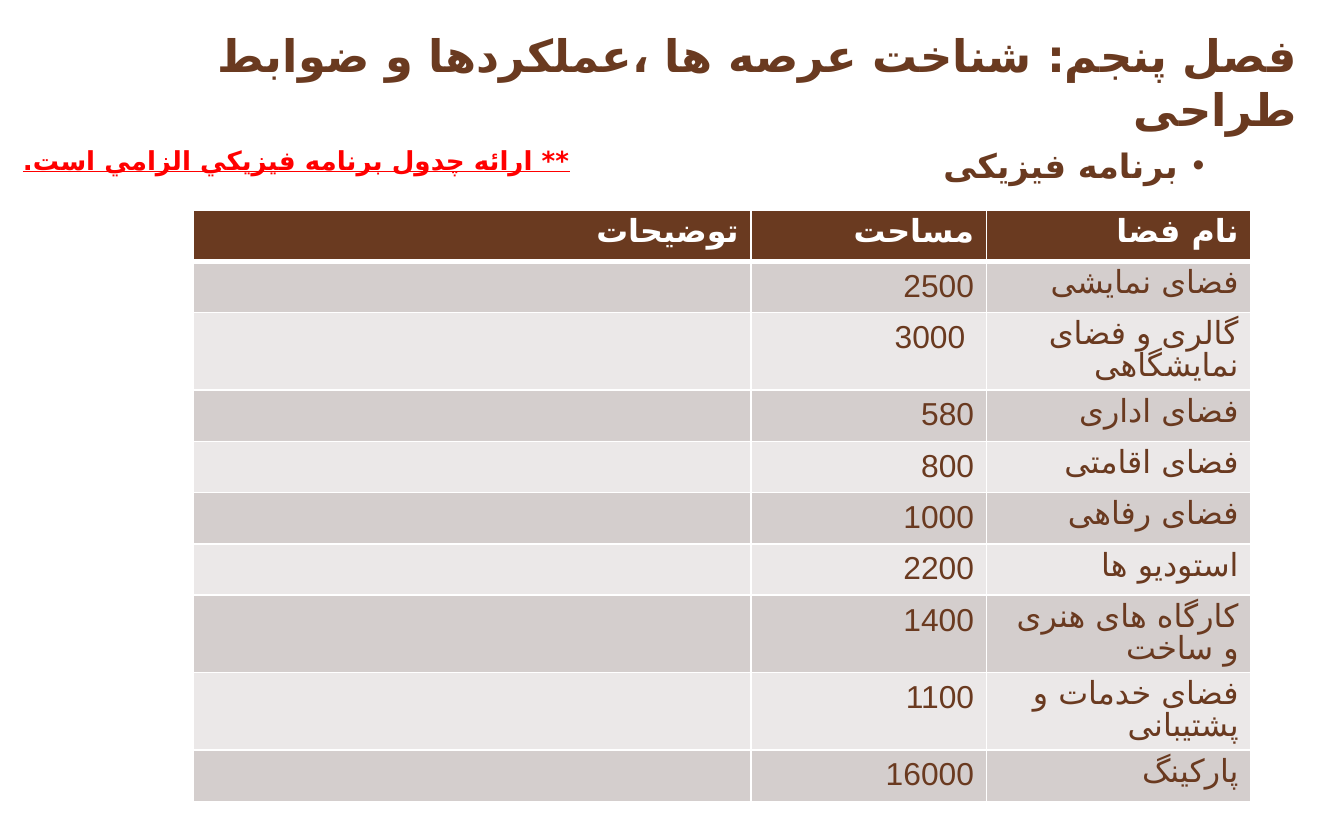
"""Build the physical programme slide with its table of spaces and areas."""
import dataclasses
import typing

import lxml.etree
import pptx
import pptx.dml.color
import pptx.enum.text
import pptx.oxml.ns
import pptx.util

Cm = pptx.util.Cm
Pt = pptx.util.Pt
qn = pptx.oxml.ns.qn

FONT = "Arial"
PERSIAN_FONT = "DejaVu Sans"
COLORS = {
    "brown": "6A3A20",
    "red": "FF0000",
    "white": "FFFFFF",
    "odd": "D4CECD",
    "even": "EBE8E8",
}


@dataclasses.dataclass(frozen=True)
class TextStyle:
    size: float
    color: str = "brown"
    bold: bool = True
    underline: bool = False
    right_to_left: bool = True
    line_spacing: typing.Optional[float] = None
    bullet: bool = False


@dataclasses.dataclass(frozen=True)
class Label:
    text: str
    left: float
    top: float
    width: float
    height: float
    style: TextStyle
    margin_x: float = 0.25
    margin_y: float = 0.13
    anchor: typing.Any = pptx.enum.text.MSO_ANCHOR.TOP


@dataclasses.dataclass(frozen=True)
class Space:
    name: str
    area: str
    remarks: str = ""


LABELS = [
    Label("برنامه فیزیکی", 2.69, 2.69, 20.32, 1.1,
          TextStyle(18, line_spacing=0.9, bullet=True)),
    Label("فصل پنجم: شناخت عرصه ها ،عملکردها و ضوابط طراحی", 2.87, 1.42, 21.89, 1.27,
          TextStyle(24), anchor=pptx.enum.text.MSO_ANCHOR.BOTTOM),
    Label("** ارائه چدول برنامه فيزيکي الزامي است.", 0.2, 2.69, 10.75, 0.79,
          TextStyle(14, "red", underline=True, line_spacing=0.9),
          margin_x=0.18, margin_y=0.1),
]
HEADER = Space("نام فضا", "مساحت", "توضیحات")
SPACES = [
    Space("فضای نمایشی", "2500"),
    Space("گالری و فضای نمایشگاهی", "3000 "),
    Space("فضای اداری", "580"),
    Space("فضای اقامتی", "800"),
    Space("فضای رفاهی", "1000"),
    Space("استودیو ها", "2200"),
    Space("کارگاه های هنری و ساخت", "1400"),
    Space("فضای خدمات و پشتیبانی", "1100"),
    Space("پارکینگ", "16000"),
]
COLUMN_WIDTHS = [10.53, 4.45, 5.0]
ROW_HEIGHT = 0.97
HEADER_STYLE = TextStyle(17, "white", line_spacing=0.86)
NAME_STYLE = TextStyle(17, bold=False, right_to_left=False, line_spacing=0.86)
AREA_STYLE = TextStyle(17, bold=False, right_to_left=False)


def rgb(name: str) -> pptx.dml.color.RGBColor:
    """Return the named colour."""
    return pptx.dml.color.RGBColor.from_string(COLORS[name])


def write(text_frame: typing.Any, text: str, style: TextStyle) -> None:
    """Write one styled, right-aligned paragraph."""
    paragraph = text_frame.paragraphs[0]
    paragraph.text = text
    paragraph.alignment = pptx.enum.text.PP_ALIGN.RIGHT
    if style.line_spacing:
        paragraph.line_spacing = style.line_spacing
    properties = paragraph._p.get_or_add_pPr()
    properties.set("rtl", str(int(style.right_to_left)))
    if style.bullet:
        properties.set("marL", str(Cm(0.5)))
        properties.set("indent", str(Cm(-0.5)))
        lxml.etree.SubElement(properties, qn("a:buFont"), typeface=FONT)
        lxml.etree.SubElement(properties, qn("a:buChar"), char="•")
    font = paragraph.font
    font.name = FONT
    font.size = Pt(style.size)
    font.bold = style.bold
    font.underline = style.underline
    font.color.rgb = rgb(style.color)
    lxml.etree.SubElement(font._element, qn("a:cs"), typeface=PERSIAN_FONT)


def add_label(slide: typing.Any, label: Label) -> None:
    """Add a text box."""
    shape = slide.shapes.add_textbox(
        Cm(label.left), Cm(label.top), Cm(label.width), Cm(label.height))
    text_frame = shape.text_frame
    text_frame.word_wrap = True
    text_frame.vertical_anchor = label.anchor
    text_frame.margin_left = text_frame.margin_right = Cm(label.margin_x)
    text_frame.margin_top = text_frame.margin_bottom = Cm(label.margin_y)
    write(text_frame, label.text, label.style)


def add_borders(cell: typing.Any, top: float, bottom: float) -> None:
    """Draw white borders around a cell."""
    properties = cell._tc.get_or_add_tcPr()
    for side, width in {"L": 1, "R": 1, "T": top, "B": bottom}.items():
        line = lxml.etree.SubElement(properties, qn(f"a:ln{side}"), w=str(Pt(width)))
        fill = lxml.etree.SubElement(line, qn("a:solidFill"))
        lxml.etree.SubElement(fill, qn("a:srgbClr"), val=COLORS["white"])


def add_space_table(slide: typing.Any) -> None:
    """Add the table of spaces with a header and banded rows."""
    rows = [HEADER, *SPACES]
    table = slide.shapes.add_table(
        len(rows), len(COLUMN_WIDTHS), Cm(3.66), Cm(3.97),
        Cm(sum(COLUMN_WIDTHS)), Cm(ROW_HEIGHT * len(rows))).table
    for column, width in zip(table.columns, COLUMN_WIDTHS):
        column.width = Cm(width)
    for index, space in enumerate(rows):
        table.rows[index].height = Cm(ROW_HEIGHT)
        is_header = index == 0
        fill = "brown" if is_header else "odd" if index % 2 else "even"
        texts = [space.remarks, space.area, space.name]
        styles = [HEADER_STYLE] * 3 if is_header else [AREA_STYLE, AREA_STYLE, NAME_STYLE]
        for column_index, (text, style) in enumerate(zip(texts, styles)):
            cell = table.cell(index, column_index)
            add_borders(cell, 3 if index == 1 else 1, 3 if is_header else 1)
            cell.fill.solid()
            cell.fill.fore_color.rgb = rgb(fill)
            cell.margin_left = cell.margin_right = Cm(0.23)
            cell.margin_top = cell.margin_bottom = Cm(0.13)
            write(cell.text_frame, text, style)


def main() -> None:
    """Build and save the presentation."""
    presentation = pptx.Presentation()
    presentation.slide_width = Cm(25.4)
    presentation.slide_height = Cm(15.88)
    slide = presentation.slides.add_slide(presentation.slide_layouts[6])
    add_space_table(slide)
    for label in LABELS:
        add_label(slide, label)
    presentation.save("out.pptx")


if __name__ == "__main__":
    main()
